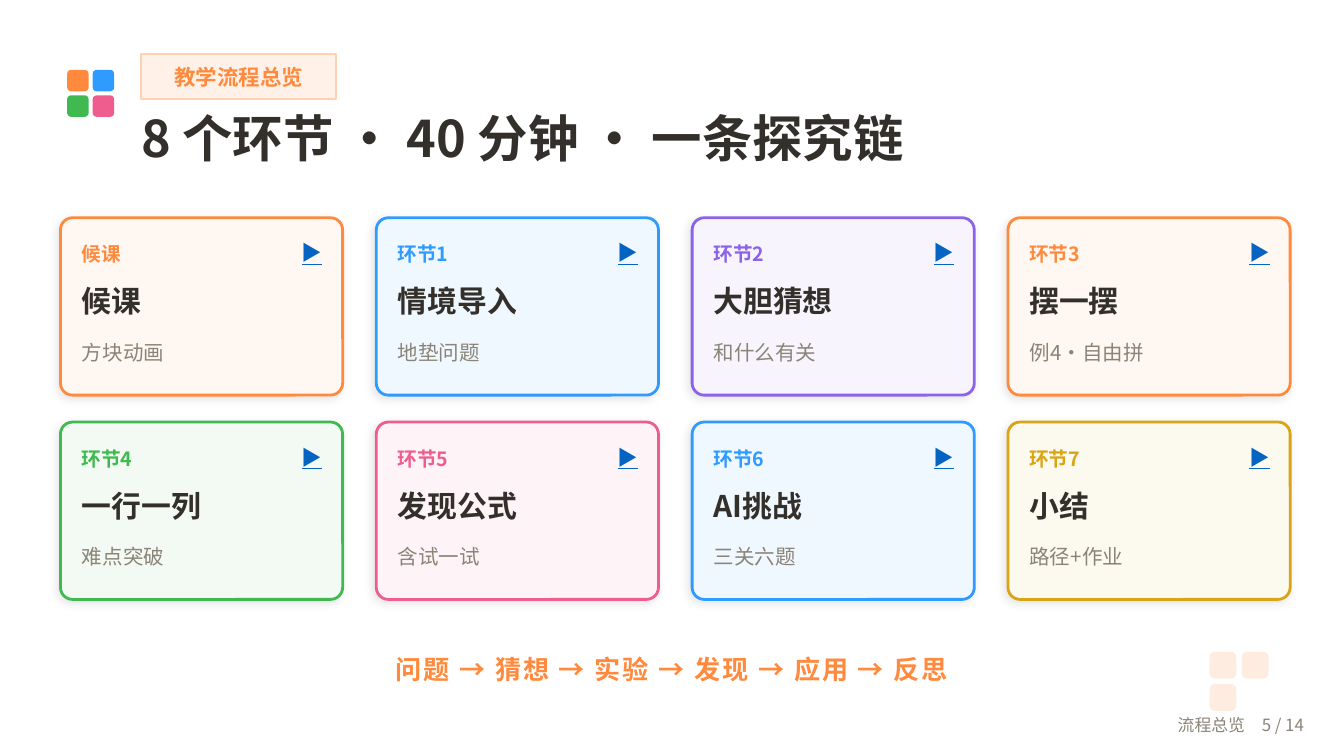
from typing import NamedTuple

from lxml import etree
from pptx import Presentation
from pptx.dml.color import RGBColor
from pptx.enum import shapes, text
from pptx.oxml import ns
from pptx.util import Pt

FONT = "Noto Sans CJK SC"
ORANGE = RGBColor(0xFF, 0x8A, 0x3D)
BLUE = RGBColor(0x2F, 0x9B, 0xFF)
GREEN = RGBColor(0x3F, 0xB9, 0x50)
PINK = RGBColor(0xEF, 0x5D, 0x8F)
PURPLE = RGBColor(0x8A, 0x63, 0xE8)
GOLD = RGBColor(0xD9, 0xA5, 0x14)
INK = RGBColor(0x33, 0x30, 0x2B)
GRAY = RGBColor(0x8A, 0x84, 0x78)
LINK_BLUE = RGBColor(0x05, 0x63, 0xC1)
PEACH = RGBColor(0xFF, 0xEC, 0xE0)
TAG_FILL = RGBColor(0xFF, 0xF1, 0xE8)
TAG_LINE = RGBColor(0xFF, 0xD0, 0xB1)
CARD_FILLS = {
    ORANGE: RGBColor(0xFF, 0xF7, 0xF1),
    BLUE: RGBColor(0xF0, 0xF8, 0xFF),
    PURPLE: RGBColor(0xF7, 0xF4, 0xFD),
    GREEN: RGBColor(0xF2, 0xFA, 0xF3),
    PINK: RGBColor(0xFE, 0xF4, 0xF7),
    GOLD: RGBColor(0xFC, 0xF9, 0xEF),
}
LEFT, CENTER, RIGHT = text.PP_ALIGN.LEFT, text.PP_ALIGN.CENTER, text.PP_ALIGN.RIGHT
TOP, MIDDLE = text.MSO_ANCHOR.TOP, text.MSO_ANCHOR.MIDDLE
RECT, ROUNDED = shapes.MSO_SHAPE.RECTANGLE, shapes.MSO_SHAPE.ROUNDED_RECTANGLE

COLUMNS = 4
CARD_LEFT, CARD_TOP = 32.4, 116.64
CARD_W, CARD_H = 151.2, 95.04
COLUMN_STEP, ROW_STEP = 169.2, 109.44


class Box(NamedTuple):
    """Left, top, width and height in points."""
    x: float
    y: float
    w: float
    h: float


class Stage(NamedTuple):
    label: str
    name: str
    note: str
    color: RGBColor


class Tile(NamedTuple):
    column: int
    row: int
    color: RGBColor


STAGES = [
    Stage("候课", "候课", "方块动画", ORANGE),
    Stage("环节1", "情境导入", "地垫问题", BLUE),
    Stage("环节2", "大胆猜想", "和什么有关", PURPLE),
    Stage("环节3", "摆一摆", "例4·自由拼", ORANGE),
    Stage("环节4", "一行一列", "难点突破", GREEN),
    Stage("环节5", "发现公式", "含试一试", PINK),
    Stage("环节6", "AI挑战", "三关六题", BLUE),
    Stage("环节7", "小结", "路径+作业", GOLD),
]
CORNER_TILES = [Tile(0, 0, PEACH), Tile(1, 0, PEACH), Tile(0, 1, PEACH)]
HEADER_TILES = [Tile(0, 0, ORANGE), Tile(1, 0, BLUE), Tile(0, 1, GREEN), Tile(1, 1, PINK)]


def write(sp, content: str, *, size: float, color: RGBColor, bold: bool = False,
          underline: bool = False, align=LEFT, anchor=MIDDLE, inset: bool = False,
          spacing: float = 0) -> None:
    tf = sp.text_frame
    tf.word_wrap = True
    tf.auto_size = text.MSO_AUTO_SIZE.NONE
    tf.vertical_anchor = anchor
    if not inset:
        tf.margin_left = tf.margin_top = tf.margin_right = tf.margin_bottom = 0
    p = tf.paragraphs[0]
    p.alignment = align
    r = p.add_run()
    r.text = content
    r.font.name = FONT
    r.font.size = Pt(size)
    r.font.bold = bold
    r.font.underline = underline
    r.font.color.rgb = color
    props = r.font._element
    props.set("lang", "zh-CN")
    if spacing:
        props.set("spc", str(round(spacing * 100)))
    etree.SubElement(props, ns.qn("a:ea"), typeface=FONT)


def add_text(slide, box: Box, content: str, **style) -> None:
    write(slide.shapes.add_textbox(*map(Pt, box)), content, **style)


def add_block(slide, kind, box: Box, fill: RGBColor, *, line: RGBColor | None = None,
              line_width: float = 1, corner: float | None = None):
    sp = slide.shapes.add_shape(kind, *map(Pt, box))
    sp.shadow.inherit = False
    sp.fill.solid()
    sp.fill.fore_color.rgb = fill
    if line is None:
        sp.line.fill.background()
    else:
        sp.line.color.rgb = line
        sp.line.width = Pt(line_width)
    if corner is not None:
        sp.adjustments[0] = corner
    return sp


def add_soft_shadow(sp) -> None:
    effects = sp._element.spPr.find(ns.qn("a:effectLst"))
    shadow = etree.SubElement(effects, ns.qn("a:outerShdw"), blurRad=str(Pt(5)),
                              dist=str(Pt(2)), dir="8100000", algn="bl", rotWithShape="0")
    color = etree.SubElement(shadow, ns.qn("a:srgbClr"), val="000000")
    etree.SubElement(color, ns.qn("a:alpha"), val="10000")


def add_tiles(slide, tiles: list[Tile], x: float, y: float, side: float, step: float,
              corner: float) -> None:
    for tile in tiles:
        box = Box(x + tile.column * step, y + tile.row * step, side, side)
        add_block(slide, ROUNDED, box, tile.color, corner=corner)


def add_card(slide, stage: Stage, x: float, y: float) -> None:
    card = add_block(slide, ROUNDED, Box(x, y, CARD_W, CARD_H), CARD_FILLS[stage.color],
                     line=stage.color, line_width=1.5, corner=0.068)
    add_soft_shadow(card)
    inner = x + 11.52
    add_text(slide, Box(inner, y + 8.64, 86.4, 21.6), stage.label,
             size=10.5, color=stage.color, bold=True)
    add_text(slide, Box(x + 111.6, y + 7.2, 28.8, 23.04), "▶",
             size=11, color=LINK_BLUE, underline=True, align=RIGHT)
    add_text(slide, Box(inner, y + 30.24, 129.6, 28.8), stage.name,
             size=16, color=INK, bold=True)
    add_text(slide, Box(inner, y + 61.2, 129.6, 21.6), stage.note, size=11, color=GRAY)


def main() -> None:
    prs = Presentation()
    prs.slide_width, prs.slide_height = Pt(720), Pt(405)
    slide = prs.slides.add_slide(prs.slide_layouts[5])

    add_tiles(slide, CORNER_TILES, 648, 349.2, side=14.4, step=17.28, corner=0.2)
    add_tiles(slide, HEADER_TILES, 36, 37.44, side=11.52, step=13.68, corner=0.18)

    tag = add_block(slide, RECT, Box(75.6, 28.8, 104.4, 24.48), TAG_FILL, line=TAG_LINE)
    write(tag, "教学流程总览", size=11.5, color=ORANGE, bold=True, align=CENTER)

    title = slide.shapes.title
    title.left, title.top, title.width, title.height = map(Pt, Box(75.6, 57.6, 604.8, 39.6))
    write(title, "8 个环节 · 40 分钟 · 一条探究链", size=27, color=INK, bold=True, anchor=TOP)

    for i, stage in enumerate(STAGES):
        row, column = divmod(i, COLUMNS)
        add_card(slide, stage, CARD_LEFT + column * COLUMN_STEP, CARD_TOP + row * ROW_STEP)

    add_text(slide, Box(36, 344.16, 648, 28.8), "问题 → 猜想 → 实验 → 发现 → 应用 → 反思",
             size=14, color=ORANGE, bold=True, align=CENTER, inset=True, spacing=1)
    add_text(slide, Box(576, 377.28, 129.6, 21.6), "流程总览　5 / 14",
             size=9, color=GRAY, align=RIGHT, inset=True)
    prs.save("out.pptx")


if __name__ == "__main__":
    main()
